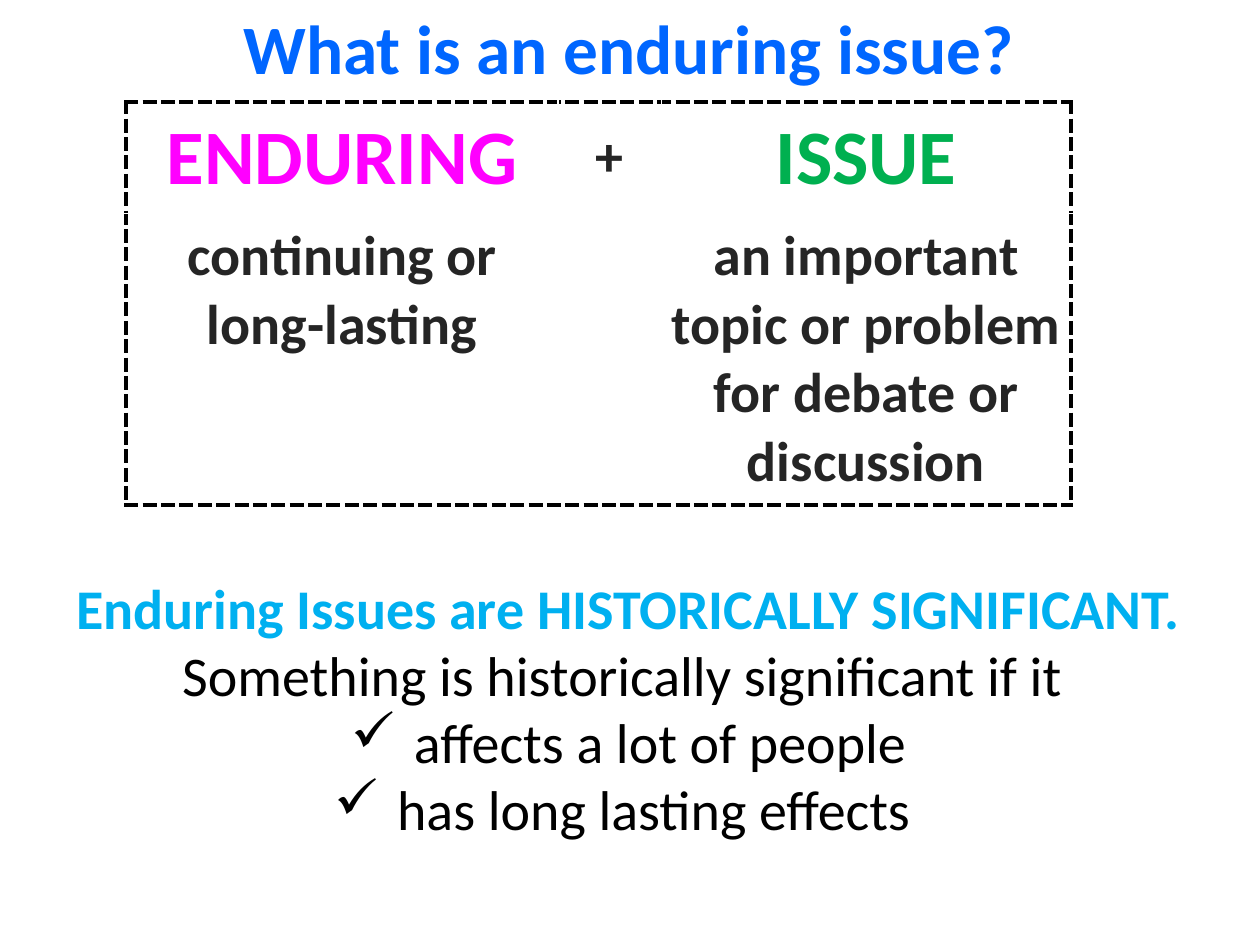
from lxml import etree
from pptx import Presentation
from pptx.dml.color import RGBColor
from pptx.enum.text import MSO_ANCHOR, PP_ALIGN
from pptx.oxml.ns import qn
from pptx.util import Inches, Pt

CENTER = PP_ALIGN.CENTER
MIDDLE, TOP = MSO_ANCHOR.MIDDLE, MSO_ANCHOR.TOP
FONT = "Calibri"
TITLE_ONLY = 5
COLORS = {
    "title": "0066FF",
    "enduring": "FF00FF",
    "issue": "00B050",
    "definition": "252525",
    "significance": "00B0F0",
    "body": "000000",
    "frame": "000000",
    "inner": "FFFFFF",
}
COLUMN_WIDTHS = (3.43, 0.82, 3.25)
ROW_HEIGHTS = (0.88, 2.26)
# Each cell: text, size, colour
DEFINITION_ROWS = (
    (("ENDURING", 44, "enduring"), ("+", 32, "definition"), ("ISSUE", 44, "issue")),
    (
        ("continuing or long-lasting", 32, "definition"),
        ("", 32, "definition"),
        ("an important topic or problem for debate or discussion", 32, "definition"),
    ),
)
# Each line: text, colour, bold, has check mark
SIGNIFICANCE_LINES = (
    ("Enduring Issues are HISTORICALLY SIGNIFICANT.", "significance", True, False),
    ("Something is historically significant if it ", "body", False, False),
    ("affects a lot of people", "body", False, True),
    ("has long lasting effects ", "body", False, True),
)


def write_paragraph(paragraph, text, size, color, bold=True):
    paragraph.text = text
    paragraph.alignment = CENTER
    font = paragraph.font
    font.name = FONT
    font.size = Pt(size)
    font.bold = bold
    font.color.rgb = RGBColor.from_string(COLORS[color])


def add_check_bullet(paragraph):
    properties = paragraph._p.get_or_add_pPr()
    properties.set("marL", str(Inches(0.5)))
    properties.set("indent", str(Inches(-0.5)))
    bullet = etree.Element(qn("a:buChar"), char="✓")
    properties.insert(0, bullet)


def set_borders(cell, outer_sides):
    """Dash the sides on the table's frame and keep the others thin and white."""
    properties = cell._tc.get_or_add_tcPr()
    for position, side in enumerate("LRTB"):
        framed = side in outer_sides
        line = etree.Element(qn(f"a:ln{side}"), w=str(Pt(2.25 if framed else 1)))
        fill = etree.SubElement(line, qn("a:solidFill"))
        color = COLORS["frame" if framed else "inner"]
        etree.SubElement(fill, qn("a:srgbClr"), val=color)
        etree.SubElement(line, qn("a:prstDash"), val="dash" if framed else "solid")
        properties.insert(position, line)


def add_title(slide):
    title = slide.shapes.title
    title.left, title.top = Inches(0.49), Inches(0)
    title.width, title.height = Inches(9), Inches(0.75)
    title.text_frame.vertical_anchor = MIDDLE
    write_paragraph(title.text_frame.paragraphs[0], "What is an enduring issue?", 39.6, "title")


def add_definition_table(slide):
    table = slide.shapes.add_table(
        len(ROW_HEIGHTS), len(COLUMN_WIDTHS), Inches(1), Inches(0.81),
        Inches(sum(COLUMN_WIDTHS)), Inches(sum(ROW_HEIGHTS)),
    ).table
    table.first_row = table.horz_banding = False
    for column, width in zip(table.columns, COLUMN_WIDTHS):
        column.width = Inches(width)
    for row, height in zip(table.rows, ROW_HEIGHTS):
        row.height = Inches(height)

    last_column = len(COLUMN_WIDTHS) - 1
    for r, row_content in enumerate(DEFINITION_ROWS):
        for c, (text, size, color) in enumerate(row_content):
            cell = table.cell(r, c)
            cell.margin_left = cell.margin_right = Inches(0.07)
            cell.margin_top = cell.margin_bottom = Inches(0.07)
            cell.vertical_anchor = MIDDLE if r == 0 else TOP
            cell.fill.background()
            write_paragraph(cell.text_frame.paragraphs[0], text, size, color)
            outer_sides = {"T" if r == 0 else "B"}
            if c == 0:
                outer_sides.add("L")
            if c == last_column:
                outer_sides.add("R")
            set_borders(cell, outer_sides)


def add_significance_text(slide):
    box = slide.shapes.add_textbox(Inches(-0.02), Inches(3.96), Inches(10.02), Inches(2.79))
    frame = box.text_frame
    frame.word_wrap = True
    frame.margin_top = Inches(0.59)
    for index, (text, color, bold, checked) in enumerate(SIGNIFICANCE_LINES):
        paragraph = frame.add_paragraph() if index else frame.paragraphs[0]
        write_paragraph(paragraph, text, 32, color, bold)
        if checked:
            add_check_bullet(paragraph)


def main():
    presentation = Presentation()
    presentation.slide_width = Inches(10)
    presentation.slide_height = Inches(7.5)
    slide = presentation.slides.add_slide(presentation.slide_layouts[TITLE_ONLY])
    add_title(slide)
    add_definition_table(slide)
    add_significance_text(slide)
    presentation.save("out.pptx")


if __name__ == "__main__":
    main()
